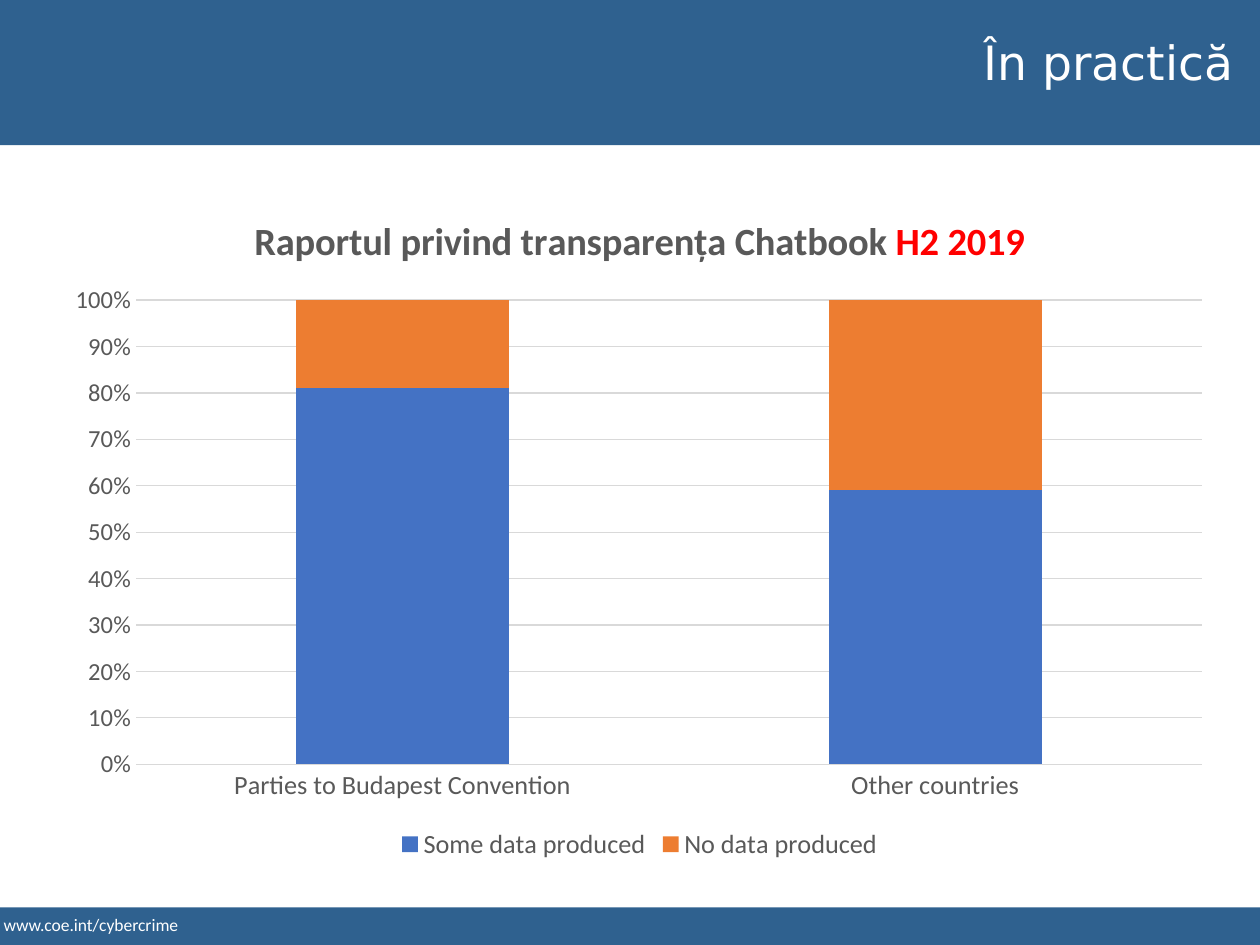
"""Build a slide with a stacked column chart on data produced by a social network."""
from lxml import etree
from pptx import Presentation
from pptx.chart.data import CategoryChartData
from pptx.dml.color import RGBColor
from pptx.enum.chart import XL_CHART_TYPE, XL_LEGEND_POSITION, XL_TICK_MARK
from pptx.enum.text import MSO_ANCHOR, PP_ALIGN
from pptx.oxml import parse_xml
from pptx.util import Pt

STACKED = XL_CHART_TYPE.COLUMN_STACKED_100
BOTTOM = XL_LEGEND_POSITION.BOTTOM
NO_TICK = XL_TICK_MARK.NONE
MIDDLE = MSO_ANCHOR.MIDDLE
RIGHT = PP_ALIGN.RIGHT
CHART_NS = "http://schemas.openxmlformats.org/drawingml/2006/chart"
BLUE, WHITE, GREY, PALE, RED = "2F618F", "FFFFFF", "595959", "D9D9D9", "FF0000"


def color(value):
    return RGBColor.from_string(value)


def set_font(font, size, value, name="Calibri", bold=False):
    formats = {"size": Pt(size), "name": name, "bold": bold}
    for key, setting in formats.items():
        setattr(font, key, setting)
    font.color.rgb = color(value)


deck = Presentation()
deck.slide_width, deck.slide_height = Pt(720), Pt(540)
page = deck.slides.add_slide(deck.slide_layouts[5])

for top, height in ((-2, 85), (518.5, 23)):
    band = page.shapes.add_shape(1, Pt(0), Pt(top), Pt(720), Pt(height))
    band.shadow.inherit = False
    band.fill.solid()
    band.fill.fore_color.rgb = color(BLUE)
    band.line.fill.background()

footer = page.shapes.add_textbox(Pt(-5), Pt(519), Pt(253.5), Pt(19.5))
footer.text_frame.word_wrap = True
footer.text_frame.text = "www.coe.int/cybercrime"
set_font(footer.text_frame.paragraphs[0].runs[0].font, 10, WHITE)

title = page.shapes.title
page.shapes._spTree.append(title._element)
place = {"left": 99.5, "top": 14.5, "width": 612.5, "height": 41}
for key, length in place.items():
    setattr(title, key, Pt(length))
title.text_frame.text = "În practică"
title.text_frame.vertical_anchor = MIDDLE
title.text_frame.word_wrap = True
para = title.text_frame.paragraphs[0]
para.alignment = RIGHT
set_font(para.runs[0].font, 27, WHITE, "DejaVu Sans")

data = CategoryChartData(number_format="#,##0")
data.categories = ["Parties to Budapest Convention", "Other countries"]
data.add_series("Some data produced", (81, 59))
data.add_series("No data produced", (19, 41))
frame = page.shapes.add_chart(STACKED, Pt(31), Pt(110), Pt(669), Pt(384.5), data)
chart = frame.chart
set_font(chart.font, 10, "000000")

chart.has_title = True
para = chart.chart_title.text_frame.paragraphs[0]
for text, value in (("Raportul privind transparența Chatbook ", GREY), ("H2 2019", RED)):
    span = para.add_run()
    span.text = text
    set_font(span.font, 22, value, bold=True)

chart.has_legend = True
chart.legend.position = BOTTOM
chart.legend.include_in_layout = False
set_font(chart.legend.font, 15, GREY)

plot = chart.plots[0]
plot.gap_width, plot.overlap = 150, 100
plot.vary_by_categories = False
for series, value in zip(plot.series, ("4472C4", "ED7D31")):
    series.format.fill.solid()
    series.format.fill.fore_color.rgb = color(value)

for axis, size in ((chart.category_axis, 15), (chart.value_axis, 14)):
    axis.major_tick_mark = axis.minor_tick_mark = NO_TICK
    set_font(axis.tick_labels.font, size, GREY)
values = chart.value_axis
values.minimum_scale, values.maximum_scale, values.major_unit = 0, 1, 0.1
values.tick_labels.number_format = "0%"
values.tick_labels.number_format_is_linked = False
values.format.line.fill.background()
values.has_major_gridlines = True
for line in (chart.category_axis.format.line, values.major_gridlines.format.line):
    line.color.rgb = color(PALE)
    line.width = Pt(0.75)

area = chart._chartSpace.chart.plotArea
for old in area.findall(f"{{{CHART_NS}}}layout"):
    area.remove(old)
layout = parse_xml(f'<c:layout xmlns:c="{CHART_NS}"><c:manualLayout/></c:layout>')
settings = {"layoutTarget": "inner", "xMode": "edge", "yMode": "edge",
            "x": "0.07", "y": "0.16", "w": "0.91", "h": "0.69"}
for tag, value in settings.items():
    etree.SubElement(layout[0], f"{{{CHART_NS}}}{tag}").set("val", value)
area.insert(0, layout)

deck.save("out.pptx")
